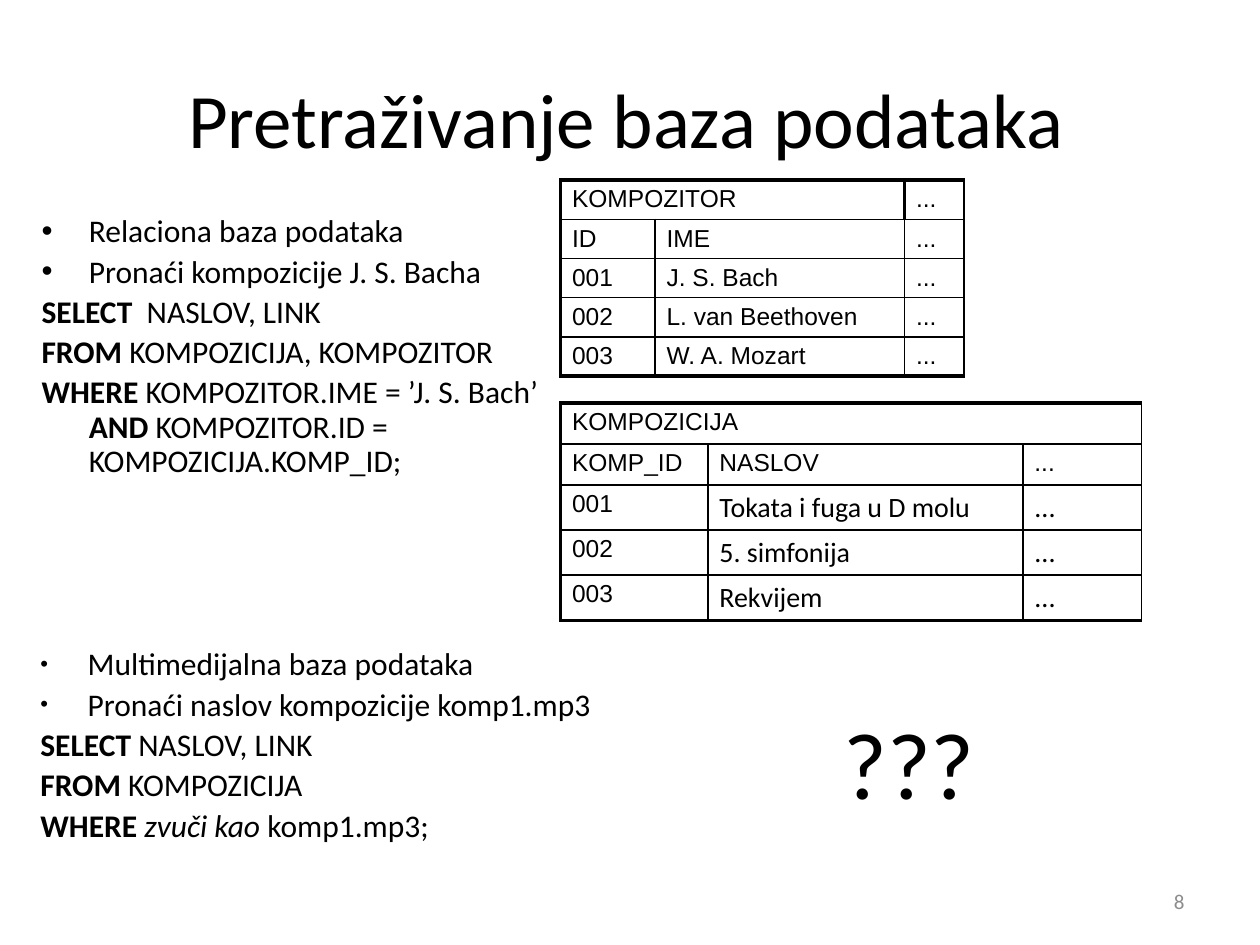
from lxml import etree
from pptx import Presentation
from pptx.dml.color import RGBColor
from pptx.enum.text import MSO_ANCHOR, MSO_AUTO_SIZE, PP_ALIGN
from pptx.oxml.ns import qn
from pptx.util import Pt

BLACK = RGBColor(0, 0, 0)
GRAY = RGBColor(0x8C, 0x8C, 0x8C)
LEFT, CENTER, RIGHT = PP_ALIGN.LEFT, PP_ALIGN.CENTER, PP_ALIGN.RIGHT
TOP, MIDDLE = MSO_ANCHOR.TOP, MSO_ANCHOR.MIDDLE
NO_AUTOFIT = MSO_AUTO_SIZE.NONE
THIN, THICK = 1, 2.25
INDENT = 27

RELATIONAL = [
    [("Relaciona baza podataka", "")],
    [("Pronaći kompozicije J. S. Bacha", "")],
    [("SELECT  ", "b"), ("NASLOV, LINK", "")],
    [("FROM ", "b"), ("KOMPOZICIJA, KOMPOZITOR", "")],
    [("WHERE ", "b"), ("KOMPOZITOR.IME = ’J. S. Bach’", ""), ("", "break"),
     ("AND ", "b"), ("KOMPOZITOR.ID = KOMPOZICIJA.KOMP_ID;", "")],
]
MULTIMEDIA = [
    [("Multimedijalna baza podataka", "")],
    [("Pronaći naslov kompozicije komp1.mp3", "")],
    [("SELECT ", "b"), ("NASLOV, LINK", "")],
    [("FROM ", "b"), ("KOMPOZICIJA", "")],
    [("WHERE ", "b"), ("zvuči kao ", "i"), ("komp1.mp3;", "")],
]
COMPOSERS = [
    ["KOMPOZITOR", "", "..."],
    ["ID", "IME", "..."],
    ["001", "J. S. Bach", "..."],
    ["002", "L. van Beethoven", "..."],
    ["003", "W. A. Mozart", "..."],
]
COMPOSITIONS = [
    ["KOMPOZICIJA", "", ""],
    ["KOMP_ID", "NASLOV", "..."],
    ["001", "Tokata i fuga u D molu", "..."],
    ["002", "5. simfonija", "..."],
    ["003", "Rekvijem", "..."],
]


def place(shape, box):
    """Move a shape to a left, top, width, height box in points."""
    shape.left, shape.top, shape.width, shape.height = map(Pt, box)


def add_run(paragraph, text, size, font="Calibri", color=BLACK, style=""):
    """Append one formatted run; style is b, i or empty."""
    run = paragraph.add_run()
    run.text = text
    run.font.name, run.font.size = font, Pt(size)
    run.font.bold, run.font.italic = style == "b", style == "i"
    run.font.color.rgb = color


def write_line(shape, box, text, size, align, anchor=MIDDLE, color=BLACK):
    """Fill a shape with a single line of text."""
    place(shape, box)
    frame = shape.text_frame
    frame.word_wrap, frame.auto_size = True, NO_AUTOFIT
    frame.vertical_anchor = anchor
    paragraph = frame.paragraphs[0]
    paragraph.alignment = align
    add_run(paragraph, text, size, color=color)


def set_bullet(paragraph, shown, percent):
    """Give a paragraph its hanging indent and its bullet, if shown."""
    properties = paragraph._p.get_or_add_pPr()
    properties.set("marL", str(Pt(INDENT)))
    properties.set("indent", str(-Pt(INDENT)))
    if shown:
        etree.SubElement(properties, qn("a:buSzPct")).set("val", str(percent * 1000))
        etree.SubElement(properties, qn("a:buFont")).set("typeface", "Arial")
        etree.SubElement(properties, qn("a:buChar")).set("char", "•")
    else:
        etree.SubElement(properties, qn("a:buNone"))


def write_query(shape, box, lines, bullet_percent):
    """Write two bulleted lines followed by an SQL query."""
    place(shape, box)
    frame = shape.text_frame
    frame.word_wrap, frame.auto_size = True, NO_AUTOFIT
    frame.vertical_anchor = TOP
    for index, runs in enumerate(lines):
        paragraph = frame.paragraphs[0] if index == 0 else frame.add_paragraph()
        paragraph.alignment = LEFT
        paragraph.line_spacing, paragraph.space_before = 0.9, Pt(3.6)
        set_bullet(paragraph, index < 2, bullet_percent)
        for text, style in runs:
            if style == "break":
                paragraph.add_line_break()
            else:
                add_run(paragraph, text, 18, style=style)


def set_borders(cell, widths):
    """Draw the left, right, top and bottom borders of a cell."""
    properties = cell._tc.get_or_add_tcPr()
    for side, width in zip("LRTB", widths):
        line = etree.SubElement(properties, qn(f"a:ln{side}"), w=str(Pt(width)))
        fill = etree.SubElement(line, qn("a:solidFill"))
        etree.SubElement(fill, qn("a:srgbClr")).set("val", str(BLACK))


def add_relation(slide, box, rows, widths, heights, span, value_font, value_size):
    """Draw a database table whose name spans the first columns."""
    last_row, last_column = len(rows) - 1, len(widths) - 1
    frame = slide.shapes.add_table(len(rows), len(widths), *map(Pt, box))
    table = frame.table
    table.first_row = table.horz_banding = False
    for column, width in zip(table.columns, widths):
        column.width = Pt(width)
    for row, height in zip(table.rows, heights):
        row.height = Pt(height)
    table.cell(0, 0).merge(table.cell(0, span - 1))
    for r, texts in enumerate(rows):
        for c, text in enumerate(texts):
            cell = table.cell(r, c)
            name_edge = r == 0 and span <= last_column
            set_borders(cell, [
                THICK if c == 0 or (name_edge and c == span) else THIN,
                THICK if name_edge and c < span else THIN,
                THICK if r == 0 else THIN,
                THICK if r == last_row else THIN,
            ])
            cell.fill.background()
            cell.margin_left = cell.margin_right = Pt(6.5)
            cell.margin_top = cell.margin_bottom = Pt(3.1)
            if text:
                is_value = r > 1 and c > 0
                add_run(cell.text_frame.paragraphs[0], text,
                        value_size if is_value else 14,
                        value_font if is_value else "Arial")


def main():
    """Build the slide on searching databases."""
    presentation = Presentation()
    presentation.slide_width, presentation.slide_height = Pt(720), Pt(540)
    slide = presentation.slides.add_slide(presentation.slide_layouts[1])
    title, body = slide.placeholders

    def new_text():
        """Add an empty text box."""
        return slide.shapes.add_textbox(0, 0, 0, 0)

    write_line(title, (33.84, 22.32, 648, 90), "Pretraživanje baza podataka", 44, CENTER)
    write_query(body, (16.56, 119.52, 326.88, 184.32), RELATIONAL, 100)
    add_relation(slide, (320.4, 102.96, 230.4, 112), COMPOSERS,
                 (54, 142.56, 33.84), [22.4] * 5, 2, "Arial", 14)
    write_query(new_text(), (16, 367.2, 331.92, 122.4), MULTIMEDIA, 70)
    write_line(new_text(), (413.28, 399.6, 212.4, 72), "???", 54, CENTER, TOP)
    add_relation(slide, (320.4, 230.4, 331.92, 123.9), COMPOSITIONS,
                 (84.24, 180, 67.68), [23.4] * 2 + [25.7] * 3, 3, "Calibri", 16)
    write_line(new_text(), (516.24, 500.4, 167.76, 28.8), "8", 12, RIGHT, color=GRAY)
    presentation.save("out.pptx")


if __name__ == "__main__":
    main()
